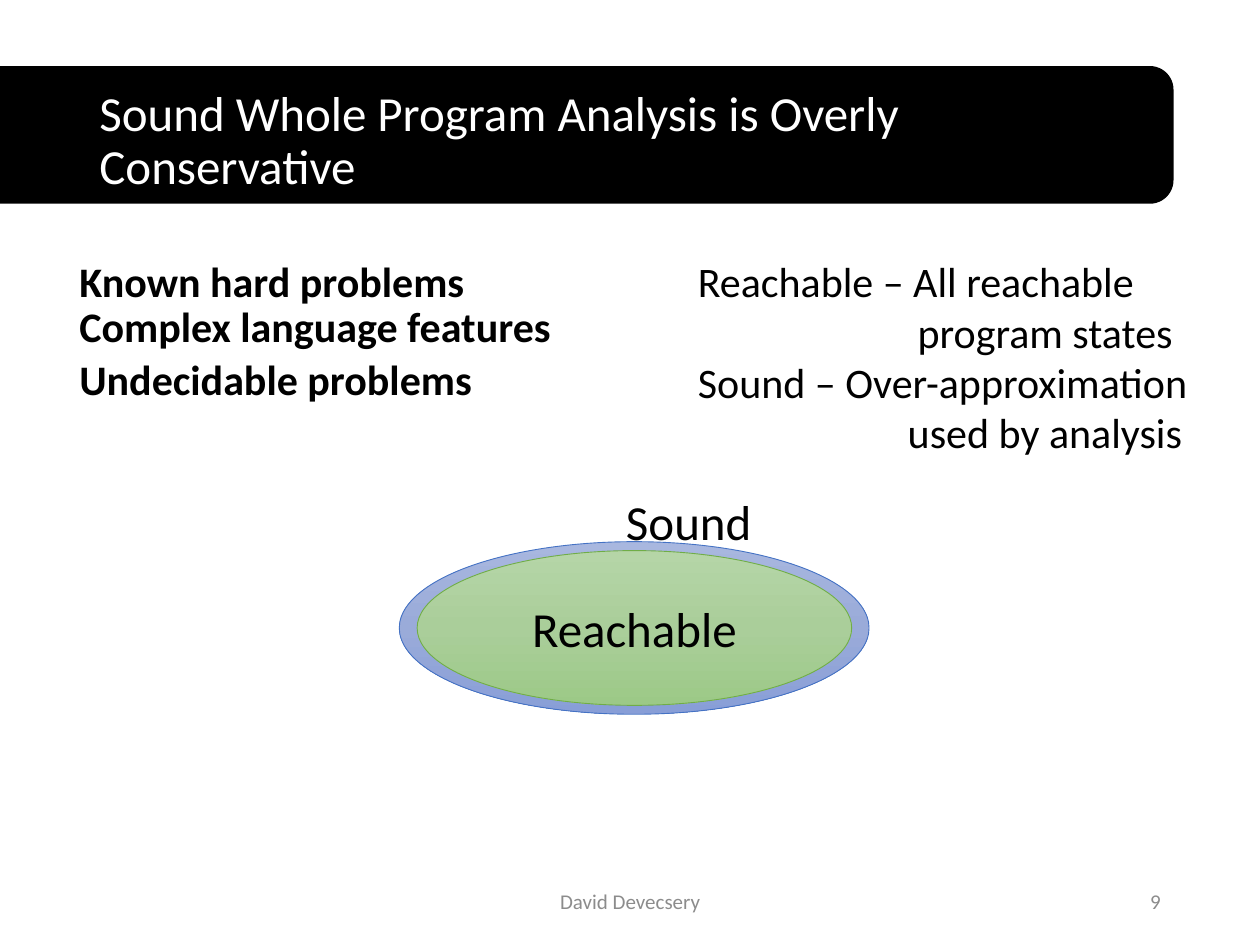
from copy import deepcopy

from pptx import Presentation
from pptx import util as u
from pptx.dml.color import RGBColor
from pptx.enum import shapes, text
from pptx.oxml.ns import qn

COLORS = {
    "black": "000000",
    "white": "FFFFFF",
    "gray": "8C8C8C",
    "blue_line": "4472C4",
    "green_line": "70AD47",
}
FONT = "Calibri"
LEFT, CENTER, RIGHT = text.PP_ALIGN.LEFT, text.PP_ALIGN.CENTER, text.PP_ALIGN.RIGHT
TOP, MIDDLE = text.MSO_ANCHOR.TOP, text.MSO_ANCHOR.MIDDLE

TITLE = "Sound Whole Program Analysis is Overly Conservative"
BAR_BOX = (-1.63, 1.35, 25.27, 2.74)
TITLE_BOX = (1.75, 1.02, 21.89, 3.68)
PROBLEMS = [
    ("Known hard problems", 5.03),
    ("Complex language features", 5.94),
    ("Undecidable problems", 7.01),
]
DEFINITIONS = [
    ("Reachable – All reachable", 0),
    ("program states", 4.43),
    ("Sound – Over-approximation", 0),
    ("used by analysis", 4.23),
]
FOOTERS = [
    ("David Devecsery", (8.41, 17.65, 8.59, 1.02), CENTER),
    ("9", (17.93, 17.65, 5.72, 1.02), RIGHT),
]
ELLIPSES = [
    ("", (8.05, 10.92, 9.47, 3.48), ("A8B7DF", "9AABD9", "889ED7"), "blue_line"),
    ("Reachable", (8.41, 11.1, 8.76, 3.12), ("B5D5A7", "AACE9A", "9CC987"), "green_line"),
]


def rgb(name):
    return RGBColor.from_string(COLORS.get(name, name))


def lengths(box):
    return [u.Cm(value) for value in box]


def write(shape, lines, size, color="black", bold=False, align=LEFT, anchor=TOP, wrap=True):
    frame = shape.text_frame
    frame.auto_size = text.MSO_AUTO_SIZE.NONE
    frame.word_wrap = wrap
    frame.vertical_anchor = anchor
    for index, (line, indent) in enumerate(lines):
        paragraph = frame.add_paragraph() if index else frame.paragraphs[0]
        paragraph.alignment = align
        if indent:
            properties = paragraph._p.get_or_add_pPr()
            properties.set("marL", str(u.Cm(indent)))
            properties.set("indent", "0")
        run = paragraph.add_run()
        run.text = line
        run.font.name = FONT
        run.font.size = u.Pt(size)
        run.font.bold = bold
        run.font.color.rgb = rgb(color)


def add_text(slide, box, lines, size, **style):
    write(slide.shapes.add_textbox(*lengths(box)), lines, size, **style)


def add_outlined(slide, kind, box, line, width):
    shape = slide.shapes.add_shape(kind, *lengths(box))
    shape.shadow.inherit = False
    shape.line.color.rgb = rgb(line)
    shape.line.width = u.Pt(width)
    return shape


def fill_gradient(shape, colors):
    shape.fill.gradient()
    shape.fill.gradient_angle = 270
    stop_list = shape._element.spPr.find(qn("a:gradFill")).find(qn("a:gsLst"))
    stop_list.insert(1, deepcopy(stop_list[0]))
    for index, (stop, color) in enumerate(zip(shape.fill.gradient_stops, colors)):
        stop.position = index / (len(colors) - 1)
        stop.color.rgb = rgb(color)


def main():
    presentation = Presentation()
    presentation.slide_width = u.Cm(25.4)
    presentation.slide_height = u.Cm(19.05)
    slide = presentation.slides.add_slide(presentation.slide_layouts[5])

    bar = add_outlined(slide, shapes.MSO_SHAPE.ROUNDED_RECTANGLE, BAR_BOX, "black", 1)
    bar.fill.solid()
    bar.fill.fore_color.rgb = rgb("black")

    title = slide.shapes.title
    title.left, title.top, title.width, title.height = lengths(TITLE_BOX)
    write(title, [(TITLE, 0)], 28, color="white", anchor=MIDDLE)
    title.text_frame.paragraphs[0].line_spacing = 0.9
    title._element.addprevious(bar._element)

    add_text(slide, (13.82, 5.03, 10.69, 4.37), DEFINITIONS, 24)
    for label, box, align in FOOTERS:
        add_text(slide, box, [(label, 0)], 12, color="gray", align=align, anchor=MIDDLE)

    for label, box, colors, line in ELLIPSES:
        ellipse = add_outlined(slide, shapes.MSO_SHAPE.OVAL, box, line, 0.5)
        fill_gradient(ellipse, colors)
        if label:
            write(ellipse, [(label, 0)], 28, align=CENTER, anchor=MIDDLE)

    add_text(slide, (12.37, 9.78, 3.07, 1.45), [("Sound", 0)], 28, wrap=False)
    for problem, top in PROBLEMS:
        add_text(slide, (1.35, top, 11.02, 1.27), [(problem, 0)], 24, bold=True)

    presentation.save("out.pptx")


if __name__ == "__main__":
    main()
